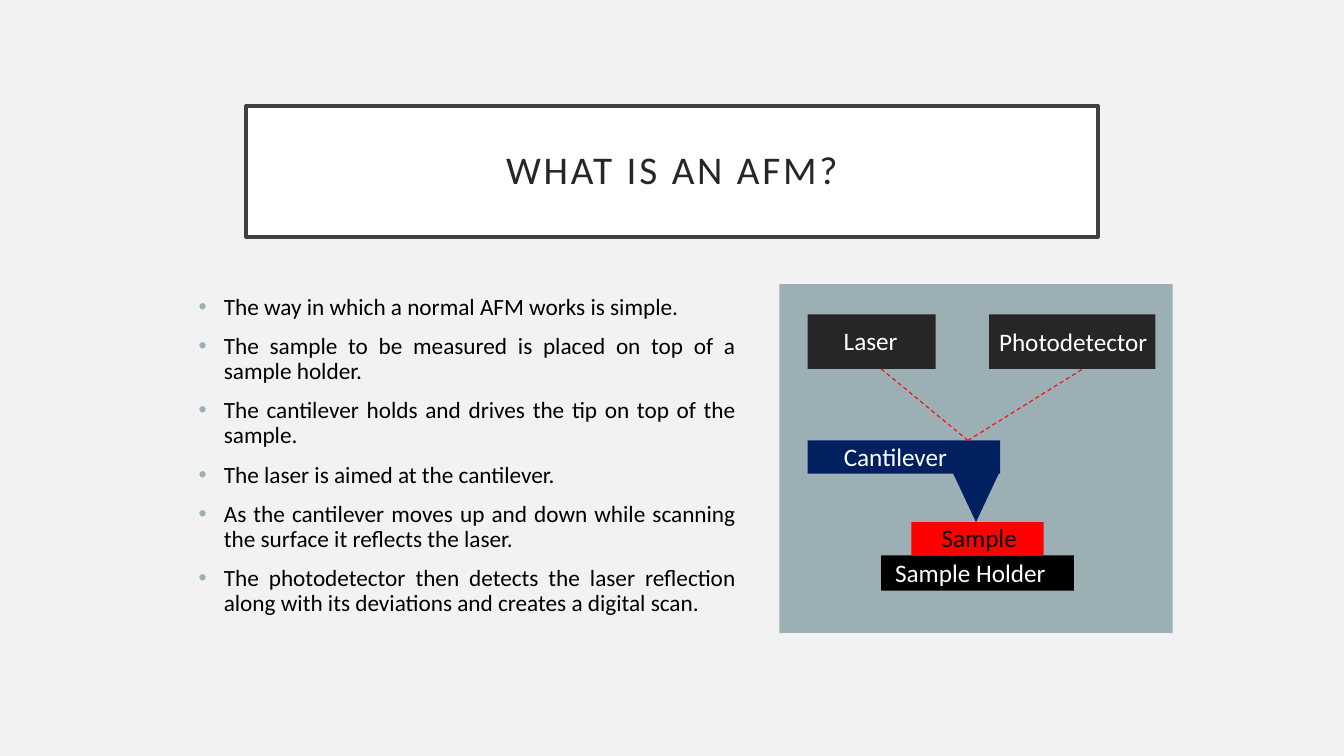
import pptx
import pptx.util
import pptx.dml.color
import pptx.enum.dml
import pptx.enum.shapes
import pptx.enum.text
import pptx.oxml.ns
import lxml.etree

Inches = pptx.util.Inches
Pt = pptx.util.Pt
ALIGN = pptx.enum.text.PP_ALIGN
SHAPE = pptx.enum.shapes.MSO_SHAPE
ANCHOR = pptx.enum.text.MSO_ANCHOR

GREY_BLUE, NAVY, CHARCOAL = "9BAFB5", "002060", "262626"
RED, BLACK, WHITE = "FF0000", "000000", "FFFFFF"


def color(value):
    return pptx.dml.color.RGBColor.from_string(value)


def add_xml(parent, tag, **attributes):
    return lxml.etree.SubElement(parent, pptx.oxml.ns.qn(tag), attributes)


def write(paragraph, text, size=18, fill=BLACK, font="Calibri", align=ALIGN.LEFT,
          line_spacing=None, space_before=0, tracking=None):
    paragraph.alignment = align
    paragraph.line_spacing = line_spacing
    paragraph.space_before = Pt(space_before)
    run = paragraph.add_run()
    run.text = text
    run.font.size = Pt(size)
    run.font.name = font
    run.font.color.rgb = color(fill)
    if tracking:
        run.font._element.set("spc", str(tracking * 100))


class SlideBuilder:
    """Holds the style and the current slide."""

    def __init__(self, presentation, background):
        self.slide = presentation.slides.add_slide(presentation.slide_layouts[1])
        self.shapes = self.slide.shapes
        fill = self.slide.background.fill
        fill.solid()
        fill.fore_color.rgb = color(background)

    def place(self, shape, left, top, width, height):
        shape.left, shape.top = Inches(left), Inches(top)
        shape.width, shape.height = Inches(width), Inches(height)

    def title(self, text, *box):
        shape = self.shapes.title
        self.place(shape, *box)
        shape.fill.solid()
        shape.fill.fore_color.rgb = color(WHITE)
        shape.line.color.rgb = color("404040")
        shape.line.width = Pt(2.5)
        frame = shape.text_frame
        frame.vertical_anchor = ANCHOR.MIDDLE
        frame.auto_size = pptx.enum.text.MSO_AUTO_SIZE.NONE
        frame.margin_left = frame.margin_right = Inches(0.2)
        frame.margin_top = frame.margin_bottom = Inches(0.2)
        write(frame.paragraphs[0], text, size=28, fill=CHARCOAL,
              align=ALIGN.CENTER, line_spacing=0.9, tracking=2)

    def bullets(self, items, *box):
        shape = self.slide.placeholders[1]
        self.place(shape, *box)
        frame = shape.text_frame
        frame.vertical_anchor = ANCHOR.TOP
        frame.auto_size = pptx.enum.text.MSO_AUTO_SIZE.NONE
        for index, item in enumerate(items):
            paragraph = frame.add_paragraph() if index else frame.paragraphs[0]
            write(paragraph, item, size=16.6, align=ALIGN.JUSTIFY,
                  line_spacing=0.9, space_before=10)
            properties = paragraph._p.get_or_add_pPr()
            properties.set("marL", str(Inches(0.25)))
            properties.set("indent", str(Inches(-0.25)))
            add_xml(add_xml(properties, "a:buClr"), "a:srgbClr", val=GREY_BLUE)
            add_xml(properties, "a:buFont", typeface="Arial")
            add_xml(properties, "a:buChar", char="•")

    def block(self, fill, left, top, width, height, kind=SHAPE.RECTANGLE, rotation=0):
        shape = self.shapes.add_shape(
            kind, Inches(left), Inches(top), Inches(width), Inches(height))
        shape.shadow.inherit = False
        shape.fill.solid()
        shape.fill.fore_color.rgb = color(fill)
        shape.line.fill.background()
        shape.rotation = rotation

    def beam(self, *ends):
        line = self.shapes.add_connector(
            pptx.enum.shapes.MSO_CONNECTOR.STRAIGHT, *map(Inches, ends))
        line.line.color.rgb = color(RED)
        line.line.width = Pt(0.75)
        line.line.dash_style = pptx.enum.dml.MSO_LINE.DASH
        add_xml(line._element.spPr, "a:effectLst")

    def label(self, text, left, top, width, fill=WHITE):
        box = self.shapes.add_textbox(
            Inches(left), Inches(top), Inches(width), Inches(0.4))
        box.text_frame.word_wrap = True
        write(box.text_frame.paragraphs[0], text, fill=fill)


def main():
    presentation = pptx.Presentation()
    presentation.slide_width, presentation.slide_height = Inches(13.33), Inches(7.5)
    builder = SlideBuilder(presentation, "F2F2F2")

    # Title and explanation
    builder.title("WHAT IS AN AFM?", 2.44, 1.05, 8.45, 1.3)
    builder.bullets([
        "The way in which a normal AFM works is simple.",
        "The sample to be measured is placed on top of a sample holder.",
        "The cantilever holds and drives the tip on top of the sample.",
        "The laser is aimed at the cantilever.",
        "As the cantilever moves up and down while scanning the surface "
        "it reflects the laser.",
        "The photodetector then detects the laser reflection along with "
        "its deviations and creates a digital scan.",
    ], 1.87, 2.88, 5.52, 3.39)

    # Diagram panel, sample and holder
    builder.block(GREY_BLUE, 7.73, 2.82, 3.9, 3.46)
    builder.block(BLACK, 8.74, 5.51, 1.91, 0.35)
    builder.block(RED, 9.04, 5.18, 1.31, 0.33)

    # Tip and cantilever
    builder.block(NAVY, 9.45, 4.69, 0.46, 0.49, SHAPE.ISOSCELES_TRIANGLE, 180)
    builder.block(NAVY, 8.01, 4.37, 1.91, 0.33)

    # Laser and photodetector
    for left, width in ((8.01, 1.27), (9.81, 1.65)):
        builder.block(CHARCOAL, left, 3.12, width, 0.54)

    # Laser beam, down to the cantilever and back up
    builder.beam(8.74, 3.66, 9.6, 4.37)
    builder.beam(9.6, 4.37, 10.74, 3.66)

    # Labels
    builder.label("Sample Holder", 8.78, 5.48, 2)
    builder.label("Sample", 9.24, 5.13, 1.06, fill=BLACK)
    builder.label("Cantilever", 8.27, 4.33, 1.39)
    builder.label("Laser", 8.27, 3.18, 1.07)
    builder.label("Photodetector", 9.81, 3.19, 1.72)

    presentation.save("out.pptx")


if __name__ == "__main__":
    main()
